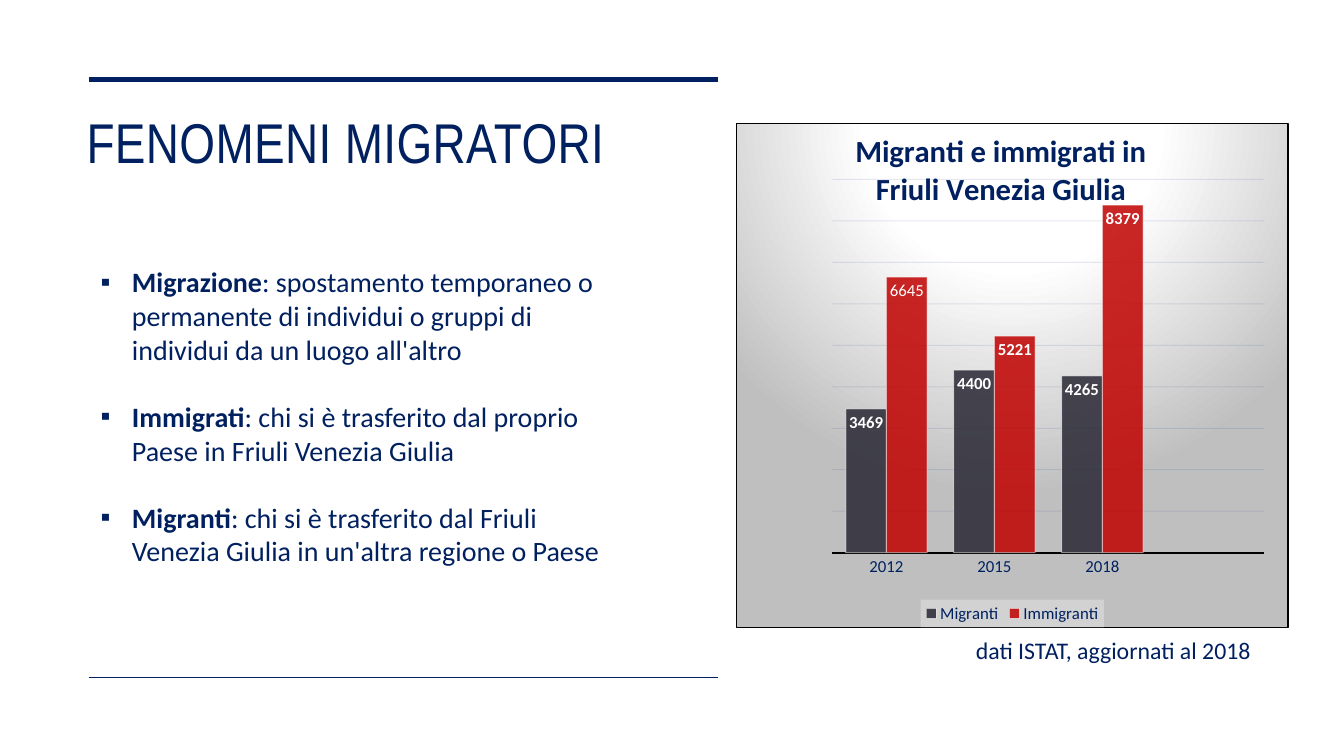
from dataclasses import dataclass

from lxml.etree import SubElement as Sub
from pptx import Presentation
from pptx.chart.data import CategoryChartData as Data
from pptx.dml.color import RGBColor as Rgb
from pptx.enum.chart import XL_CHART_TYPE as Kind, XL_LABEL_POSITION as Spot
from pptx.enum.chart import XL_LEGEND_POSITION as Side, XL_TICK_MARK as Tick
from pptx.enum.text import MSO_ANCHOR as Anchor
from pptx.oxml import parse_xml as to_xml
from pptx.oxml.ns import nsdecls, qn
from pptx.util import Inches, Pt


@dataclass(frozen=True)
class Theme:
    navy: str = "002060"
    white: str = "FFFFFF"
    black: str = "000000"
    grey: str = "BFBFBF"
    pale: str = "F2F2F2"
    grid: str = "002775"
    head: str = "Arial Narrow"
    body: str = "Calibri"
    title: float = 40
    chart: float = 22
    text: float = 20
    note: float = 17
    small: float = 12


@dataclass(frozen=True)
class Box:
    left: float
    top: float
    width: float
    height: float

    def emu(self) -> list:
        return [Inches(n) for n in (self.left, self.top, self.width, self.height)]


@dataclass(frozen=True)
class Rule:
    y: float
    width: float


@dataclass(frozen=True)
class Term:
    word: str
    sense: str


@dataclass(frozen=True)
class Group:
    name: str
    color: str
    values: tuple


LOOK = Theme()
RULES = (Rule(0.79, 3.5), Rule(6.72, 1))
TERMS = (
    Term("Migrazione", ": spostamento temporaneo o permanente di individui "
         "o gruppi di individui da un luogo all'altro"),
    Term("Immigrati", ": chi si è trasferito dal proprio Paese in Friuli Venezia Giulia"),
    Term("Migranti", ": chi si è trasferito dal Friuli Venezia Giulia "
         "in un'altra regione o Paese"),
)
YEARS = ("2012", "2015", "2018", "")
GROUPS = (
    Group("Migranti", "292834", (3469, 4400, 4265, None)),
    Group("Immigranti", "C00000", (6645, 5221, 8379, None)),
)


def style(font, size: float, color: str = LOOK.navy, bold: bool = False,
          face: str = LOOK.body) -> None:
    font.size, font.bold, font.name = Pt(size), bold, face
    font.color.rgb = Rgb.from_string(color)


def stroke(line, color: str, width: float) -> None:
    line.color.rgb = Rgb.from_string(color)
    line.width = Pt(width)


def fade(node, *parts: int) -> None:
    """Set the opacity, in percent, of each colour under node in turn."""
    for tag, part in zip(node.iter(qn("a:srgbClr")), parts):
        Sub(tag, qn("a:alpha"), val=str(part * 1000))


def place(node, index: int, **spots) -> None:
    """Give a chart part a manual layout, as fractions of the chart."""
    for old in node.findall(qn("c:layout")):
        node.remove(old)
    tags = "".join(f'<c:{key} val="{val}"/>' for key, val in spots.items())
    node.insert(index, to_xml(
        f'<c:layout {nsdecls("c")}><c:manualLayout>{tags}</c:manualLayout></c:layout>'))


def add_text(slide, box: Box, text: str = ""):
    frame = slide.shapes.add_textbox(*box.emu()).text_frame
    frame.word_wrap = True
    frame.text = text
    return frame


def add_title(slide) -> None:
    frame = add_text(slide, Box(0.76, 0.99, 6.49, 0.81), "FENOMENI MIGRATORI")
    frame.vertical_anchor = Anchor.MIDDLE
    run = frame.paragraphs[0].runs[0]
    style(run.font, LOOK.title, face=LOOK.head)
    run.font._element.set("spc", "30")


def add_rule(slide, rule: Rule) -> None:
    y = Inches(rule.y)
    line = slide.shapes.add_connector(1, Inches(0.88), y, Inches(7.12), y)
    stroke(line.line, LOOK.navy, rule.width)
    Sub(line._element.spPr, qn("a:effectLst"))


def add_terms(slide) -> None:
    frame = add_text(slide, Box(0.9, 2.58, 5.39, 3.13))
    for i, term in enumerate(TERMS):
        par = frame.add_paragraph() if i else frame.paragraphs[0]
        par.space_before = Pt(24 if i else 0)
        for text, bold in ((term.word, True), (term.sense, False)):
            run = par.add_run()
            run.text = text
            style(run.font, LOOK.text, bold=bold)
        props = par._p.get_or_add_pPr()
        props.set("marL", str(Inches(0.31)))
        props.set("indent", str(-Inches(0.31)))
        Sub(props, qn("a:buFont"), typeface="Arial")
        Sub(props, qn("a:buChar"), char="▪")


def add_back(chart) -> None:
    """Put the radial grey gradient and black frame behind the chart."""
    stops = "".join(
        f'<a:gs pos="{pos * 1000}"><a:srgbClr val="{color}"/></a:gs>'
        for pos, color in ((0, LOOK.white), (39, LOOK.white), (100, LOOK.grey)))
    back = to_xml(
        f'<c:spPr {nsdecls("c", "a")}><a:gradFill><a:gsLst>{stops}</a:gsLst>'
        '<a:path path="circle"><a:fillToRect l="50000" t="-80000" r="50000" b="180000"/>'
        f'</a:path></a:gradFill><a:ln w="{Pt(0.75)}"><a:solidFill>'
        f'<a:srgbClr val="{LOOK.black}"/></a:solidFill></a:ln></c:spPr>')
    chart._chartSpace.find(qn("c:chart")).addnext(back)


def dress_axes(chart) -> None:
    years, count = chart.category_axis, chart.value_axis
    years.major_tick_mark = Tick.NONE
    style(years.tick_labels.font, LOOK.small)
    stroke(years.format.line, LOOK.black, 1.5)
    count.minimum_scale, count.maximum_scale, count.major_unit = 0, 9000, 1000
    count.has_major_gridlines = True
    stroke(count.major_gridlines.format.line, LOOK.grid, 0.75)
    fade(count._element.find(qn("c:majorGridlines")), 10)
    count.visible = False


def dress_bars(plot) -> None:
    plot.gap_width, plot.overlap, plot.vary_by_categories = 65, 0, False
    for bars, group in zip(plot.series, GROUPS):
        bars.format.fill.solid()
        bars.format.fill.fore_color.rgb = Rgb.from_string(group.color)
        stroke(bars.format.line, LOOK.white, 0.75)
        fade(bars._element.find(qn("c:spPr")), 85, 50)
        tags = bars.data_labels
        tags.show_value, tags.position = True, Spot.INSIDE_END
        style(tags.font, LOOK.small, LOOK.white, True)
    tag = plot.series[1].points[0].data_label
    tag.text_frame.text = str(GROUPS[1].values[0])
    style(tag.text_frame.paragraphs[0].runs[0].font, LOOK.small, LOOK.white)
    tag.position = Spot.INSIDE_END


def add_chart(slide) -> None:
    data = Data()
    data.categories = YEARS
    for group in GROUPS:
        data.add_series(group.name, group.values)
    chart = slide.shapes.add_chart(
        Kind.COLUMN_CLUSTERED, *Box(7.3, 1.22, 5.48, 5.01).emu(), data).chart
    style(chart.font, 10)
    add_back(chart)
    title = chart.chart_title
    title.text_frame.text = "Migranti e immigrati in\nFriuli Venezia Giulia"
    for par in title.text_frame.paragraphs:
        style(par.runs[0].font, LOOK.chart, bold=True)
    place(title._element, 1, xMode="edge", yMode="edge", x=0.21, y=0.01)
    place(chart._chartSpace.find(qn("c:chart")).find(qn("c:plotArea")), 0,
          layoutTarget="inner", xMode="edge", yMode="edge",
          x=0.174, y=0.111, w=0.783, h=0.741)
    dress_axes(chart)
    dress_bars(chart.plots[0])
    chart.has_legend = True
    key = chart.legend
    key.position, key.include_in_layout = Side.BOTTOM, False
    style(key.font, LOOK.small)
    back = to_xml(f'<c:spPr {nsdecls("c", "a")}><a:solidFill>'
                  f'<a:srgbClr val="{LOOK.pale}"/></a:solidFill></c:spPr>')
    fade(back, 39)
    key._element.find(qn("c:overlay")).addnext(back)


def main() -> None:
    deck = Presentation()
    deck.slide_width, deck.slide_height = Inches(13.33), Inches(7.5)
    slide = deck.slides.add_slide(deck.slide_layouts[6])
    add_title(slide)
    for rule in RULES:
        add_rule(slide, rule)
    add_chart(slide)
    add_terms(slide)
    note = add_text(slide, Box(9.58, 6.26, 3.17, 0.39), "dati ISTAT, aggiornati al 2018")
    style(note.paragraphs[0].runs[0].font, LOOK.note)
    deck.save("out.pptx")


if __name__ == "__main__":
    main()
